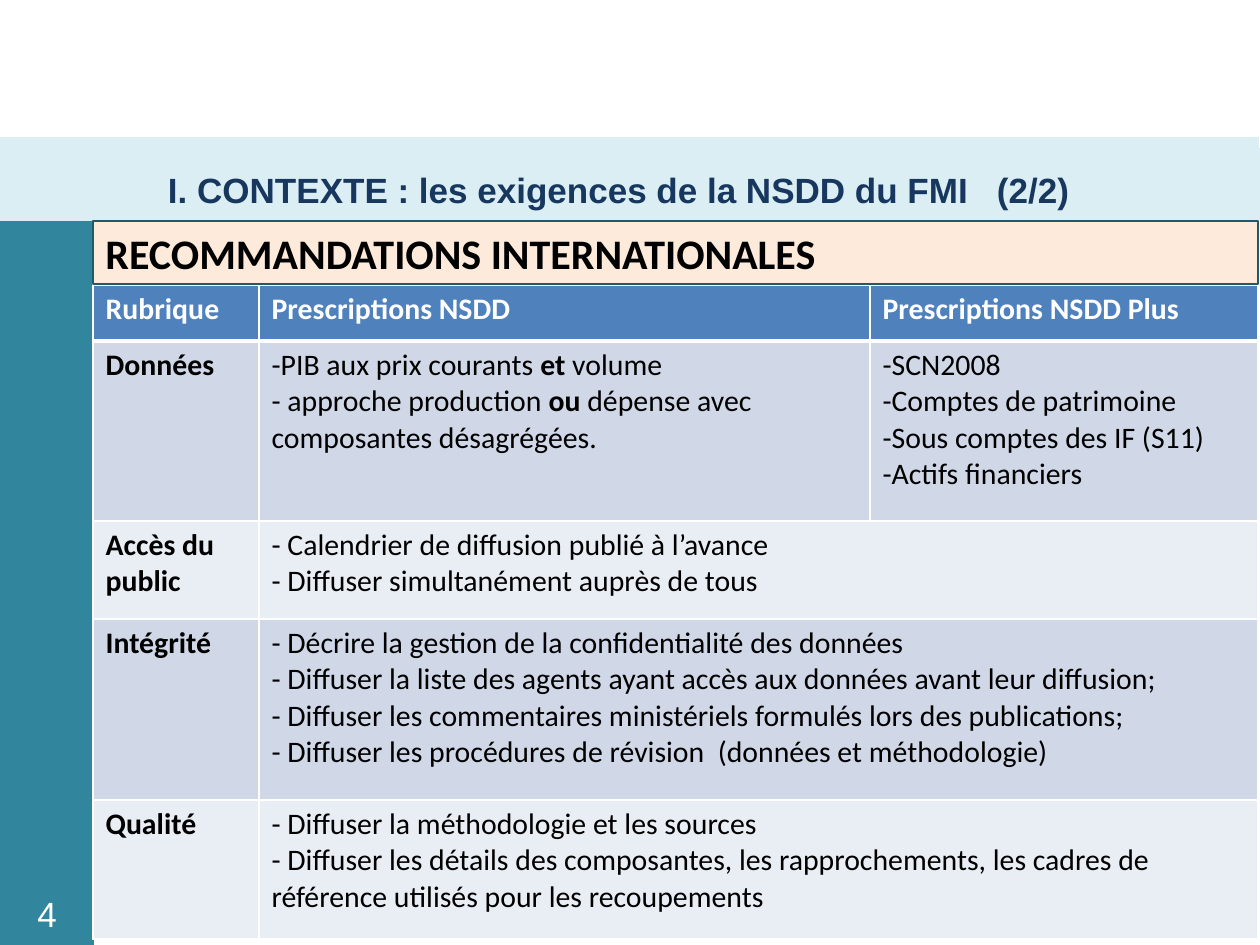
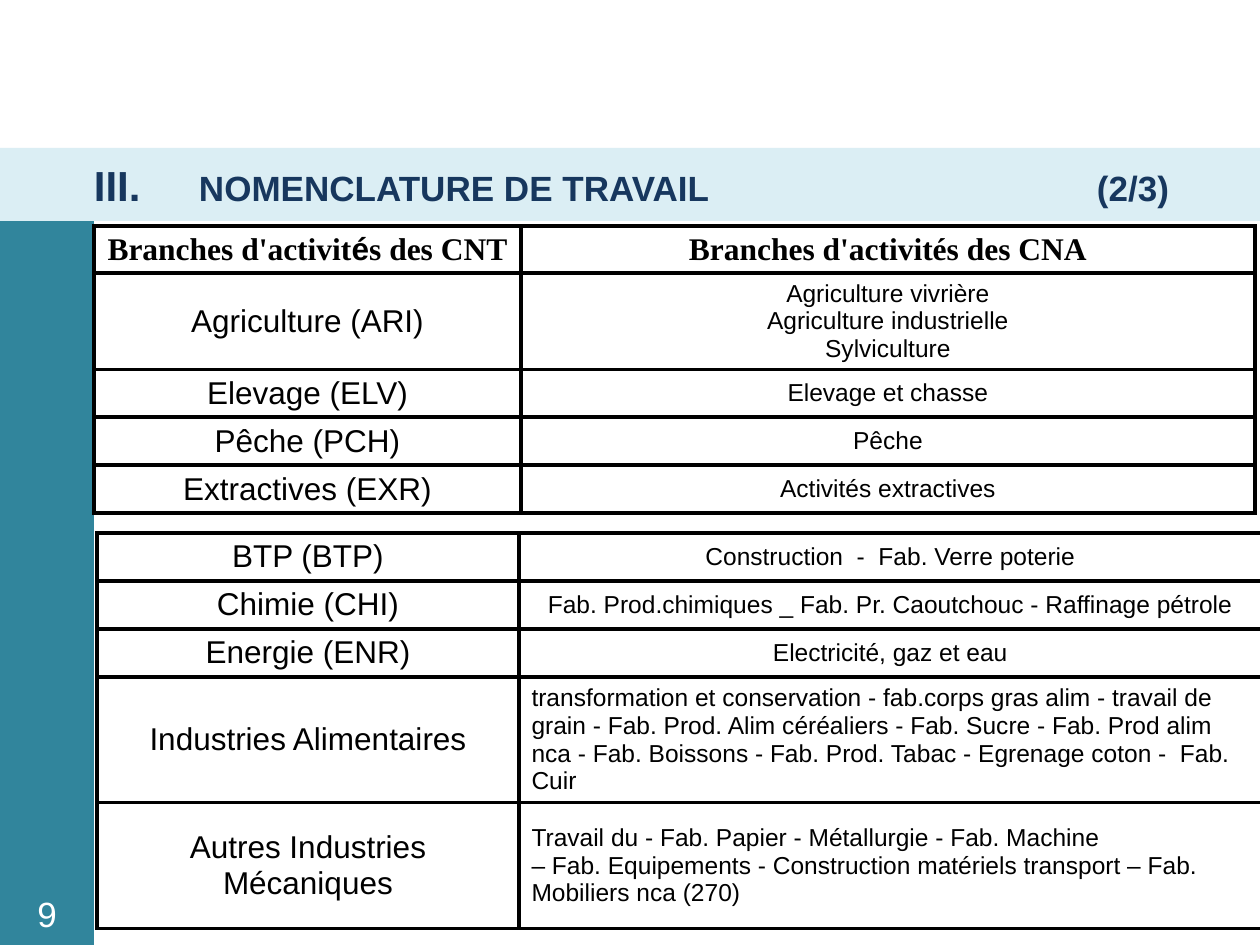
"""Build two slides on national accounts: FMI requirements and working nomenclature."""
from lxml.etree import SubElement
from pptx import Presentation
from pptx.dml.color import RGBColor
from pptx.enum.shapes import MSO_SHAPE
from pptx.enum.text import MSO_ANCHOR, PP_ALIGN
from pptx.oxml.ns import qn
from pptx.util import Emu, Pt

SCALE = 914400 / 126
HUES = {"teal": "31859C", "pale": "DBEEF4", "navy": "17375E", "peach": "FDEADA",
        "edge": "215968", "blue": "4F81BD", "dark": "D0D8E8", "light": "E9EDF4",
        "white": "FFFFFF", "black": "000000"}

RULES = [
    ("Rubrique", ["Prescriptions NSDD"], ["Prescriptions NSDD Plus"]),
    ("Données",
     ["*PIB aux prix courants |et| volume",
      "- approche production |ou| dépense avec composantes désagrégées."],
     ["*SCN2008", "*Comptes de patrimoine", "*Sous comptes des IF (S11)",
      "*Actifs financiers"]),
    ("Accès du public",
     ["- Calendrier de diffusion publié à l’avance",
      "- Diffuser simultanément auprès de tous"], None),
    ("Intégrité",
     ["- Décrire la gestion de la confidentialité des données",
      "- Diffuser la liste des agents ayant accès aux données avant leur diffusion;",
      "- Diffuser les commentaires ministériels formulés lors des publications;",
      "- Diffuser les procédures de révision  (données et méthodologie)"], None),
    ("Qualité",
     ["- Diffuser la méthodologie et les sources",
      "- Diffuser les détails des composantes, les rapprochements, les cadres de "
      "référence utilisés pour les recoupements"], None),
]
HEADS = ["Branches d'activit|é|s des CNT", "Branches d'activités des CNA"]
FARMS = [
    ("Agriculture (ARI)",
     ["Agriculture vivrière", "Agriculture industrielle", "Sylviculture"]),
    ("Elevage (ELV)", ["Elevage et chasse"]),
    ("Pêche (PCH)", ["Pêche"]),
    ("Extractives (EXR)", ["Activités extractives"]),
]
PLANTS = [
    ("BTP (BTP)", ["Construction  -  Fab. Verre poterie"]),
    ("Chimie (CHI)", ["Fab. Prod.chimiques _ Fab. Pr. Caoutchouc - Raffinage pétrole"]),
    ("Energie (ENR)", ["Electricité, gaz et eau"]),
    ("Industries Alimentaires",
     ["transformation et conservation - fab.corps gras alim - travail de grain - "
      "Fab. Prod. Alim céréaliers - Fab. Sucre - Fab. Prod alim nca - Fab. Boissons - "
      "Fab. Prod. Tabac - Egrenage coton -  Fab. Cuir"]),
    ("Autres Industries Mécaniques",
     ["Travail du - Fab. Papier - Métallurgie - Fab. Machine",
      "– Fab. Equipements - Construction matériels transport – Fab. Mobiliers nca (270)"]),
]


def px(n):
    return Emu(round(n * SCALE))


def tint(name):
    return RGBColor.from_string(HUES[name])


def style(font, size, hue="black", name="Arial", bold=False):
    font.size, font.name, font.bold = Pt(size), name, bold
    font.color.rgb = tint(hue)


def write(frame, lines, look, align=PP_ALIGN.LEFT, odd=None):
    """Fill a frame: '*' starts a dash bullet, '|' switches the odd look on and off."""
    for i, line in enumerate(lines):
        para = frame.add_paragraph() if i else frame.paragraphs[0]
        para.alignment = align
        if line.startswith("*"):
            props = para._p.get_or_add_pPr()
            SubElement(props, qn("a:buFont"), typeface=look["name"])
            SubElement(props, qn("a:buChar"), char="-")
        style(para.font, **look)
        for j, part in enumerate(line.lstrip("*").split("|")):
            run = para.add_run()
            run.text = part
            if j % 2:
                for key, val in odd.items():
                    setattr(run.font, key, val)


def block(slide, box, hue, edge=None):
    shape = slide.shapes.add_shape(MSO_SHAPE.RECTANGLE, *map(px, box))
    shape.shadow.inherit = False
    shape.fill.solid()
    shape.fill.fore_color.rgb = tint(hue)
    if edge:
        shape.line.color.rgb, shape.line.width = tint(edge), Pt(0.75)
    else:
        shape.line.fill.background()
    return shape


def title(shape, parts, left, stops, sizes, space=1):
    frame = shape.text_frame
    frame.vertical_anchor, frame.margin_left = MSO_ANCHOR.MIDDLE, px(left)
    para = frame.paragraphs[0]
    para.alignment, para.line_spacing = PP_ALIGN.LEFT, space
    tabs = SubElement(para._p.get_or_add_pPr(), qn("a:tabLst"))
    for stop in stops:
        SubElement(tabs, qn("a:tab"), pos=str(px(stop - left)), algn="l")
    style(para.font, 20, "navy", bold=True)
    for i, (part, size) in enumerate(zip(parts, sizes)):
        run = para.add_run()
        run.text = "\t" * (i > 0) + part
        if size != 20:
            run.font.size = Pt(size)


def base(deck, number):
    slide = deck.slides.add_slide(deck.slide_layouts[6])
    block(slide, (0, 221, 94, 724), "teal")
    box = slide.shapes.add_textbox(*map(px, (4, 889, 86, 50)))
    frame = box.text_frame
    frame.word_wrap, frame.vertical_anchor = True, MSO_ANCHOR.MIDDLE
    write(frame, [number], dict(size=20, hue="white"), PP_ALIGN.CENTER)
    return slide


def grid(slide, left, top, cols, rows):
    box = map(px, (left, top, sum(cols), sum(rows)))
    table = slide.shapes.add_table(len(rows), len(cols), *box).table
    table.first_row = table.horz_banding = False
    for col, wide in zip(table.columns, cols):
        col.width = px(wide)
    for row, high in zip(table.rows, rows):
        row.height = px(high)
    return table


def dress(cell, hue, edge, width, base_width=None):
    props = cell._tc.get_or_add_tcPr()
    for side in "LRTB":
        wide = base_width if side == "B" and base_width else width
        line = SubElement(props, qn("a:ln" + side), w=str(Pt(wide)))
        fill = SubElement(line, qn("a:solidFill"))
        SubElement(fill, qn("a:srgbClr"), val=HUES[edge])
    if hue:
        cell.fill.solid()
        cell.fill.fore_color.rgb = tint(hue)
    else:
        cell.fill.background()


def rules(deck):
    slide = base(deck, "4")
    block(slide, (25, 148, 1235, 73), "pale")
    band = block(slide, (0, 137, 1259, 84), "pale")
    title(band, ["I. CONTEXTE : les exigences de la NSDD du FMI", "(2/2)"],
          168, [997], [20, 20], 1.5)
    table = grid(slide, 93, 285, [166, 611, 388], [56, 180, 98, 181, 139])
    for r, (topic, *texts) in enumerate(RULES):
        hue = ("light", "dark")[r % 2] if r else "blue"
        for c, lines in enumerate([[topic], *texts]):
            cell = table.cell(r, c)
            dress(cell, hue, "white", 1, None if r else 3)
            if lines:
                look = dict(size=17, hue="black" if r else "white", name="Calibri",
                            bold=r == 0 or c == 0)
                write(cell.text_frame, lines, look, odd={"bold": True})
            else:
                table.cell(r, c - 1).merge(cell)
    bar = block(slide, (93, 221, 1165, 63), "peach", "edge")
    write(bar.text_frame, ["RECOMMANDATIONS INTERNATIONALES"],
          dict(size=24, name="Calibri", bold=True), PP_ALIGN.JUSTIFY)


def trades(slide, left, top, cols, rows, items, heads=None):
    table = grid(slide, left, top, cols, rows)
    data = [([name], lines) for name, lines in items]
    if heads:
        data.insert(0, [[head] for head in heads])
    for r, pair in enumerate(data):
        for c, lines in enumerate(pair):
            cell = table.cell(r, c)
            dress(cell, None, "black", 2.25)
            cell.vertical_anchor = MSO_ANCHOR.MIDDLE
            cell.margin_top = cell.margin_bottom = px(4)
            look = dict(size=14 if c else 18)
            if heads and r == 0:
                look = dict(size=18, name="Times New Roman", bold=True)
            flush = c and items is PLANTS and r > 2
            write(cell.text_frame, lines, look,
                  PP_ALIGN.LEFT if flush else PP_ALIGN.CENTER, {"name": "Arial"})


def branches(deck):
    slide = base(deck, "9")
    band = block(slide, (0, 148, 1260, 73), "pale")
    title(band, ["III.", "NOMENCLATURE DE TRAVAIL", "(2/3)"],
          94, [199, 1097], [24, 20, 20])
    trades(slide, 94, 226, [427, 734], [47, 96, 48, 48, 48], FARMS, HEADS)
    trades(slide, 97, 533, [422, 743], [48, 48, 48, 123, 126], PLANTS)


def main():
    deck = Presentation()
    deck.slide_width, deck.slide_height = px(1260), px(945)
    rules(deck)
    branches(deck)
    deck.save("out.pptx")


if __name__ == "__main__":
    main()
